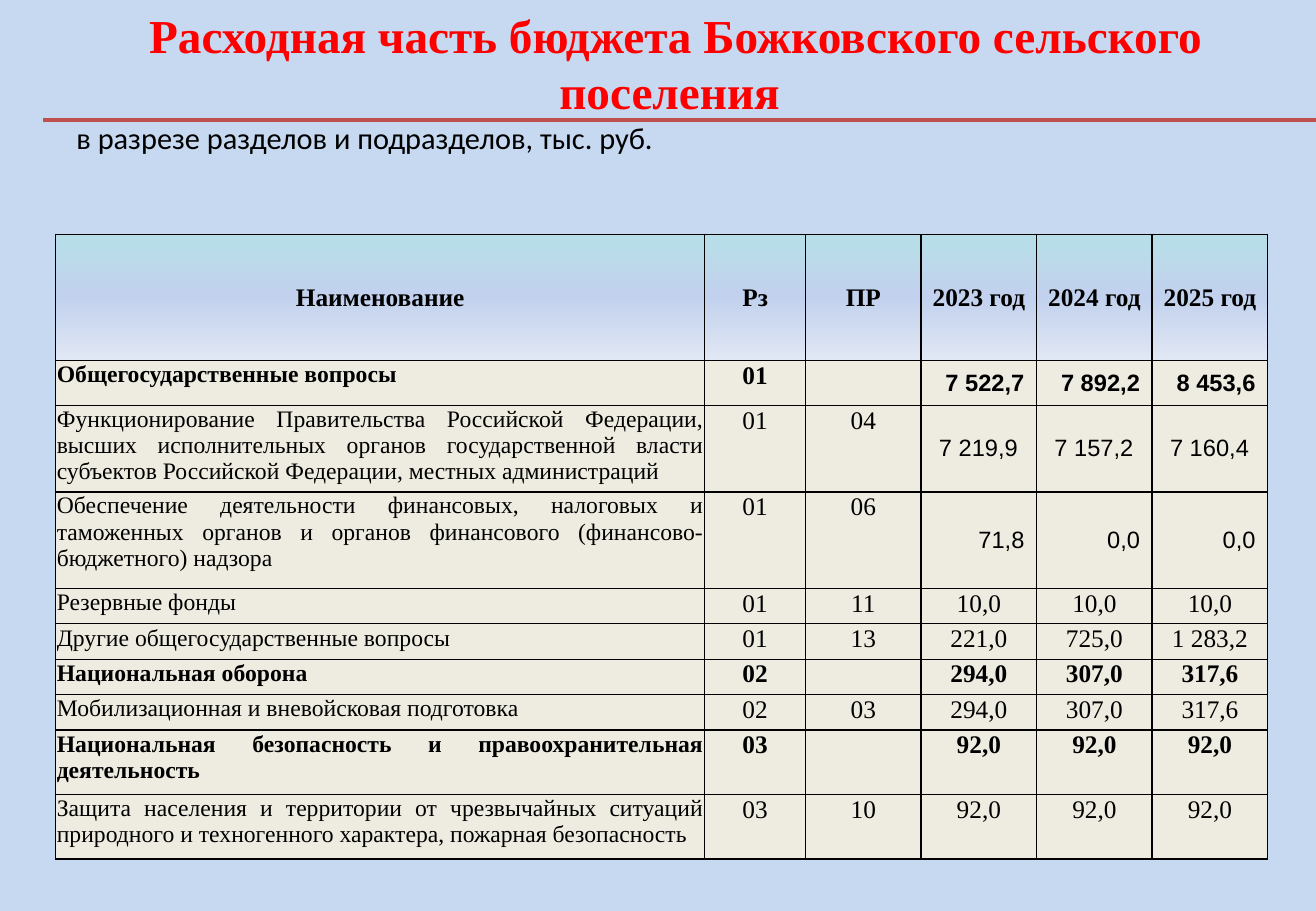
from lxml import etree
from pptx import Presentation
from pptx.dml.color import RGBColor
from pptx.enum.shapes import MSO_CONNECTOR
from pptx.enum.text import MSO_ANCHOR, PP_ALIGN
from pptx.oxml.ns import qn
from pptx.util import Pt

LEFT, CENTER, RIGHT, JUSTIFY = PP_ALIGN.LEFT, PP_ALIGN.CENTER, PP_ALIGN.RIGHT, PP_ALIGN.JUSTIFY
TOP, MIDDLE = MSO_ANCHOR.TOP, MSO_ANCHOR.MIDDLE
STRAIGHT = MSO_CONNECTOR.STRAIGHT
SERIF, SANS = "Times New Roman", "Arial"

# Content
COLORS = {"page": "C6D9F1", "title": "FF0000", "rule": "C0504D",
          "text": "000000", "border": "000000", "body": "EEECE1"}
HEADER_GRADIENT = [(0, "B7DEE8"), (50, "C2D1ED"), (100, "E1E8F5")]
TITLE = ("Расходная часть бюджета Божковского сельского поселения \n"
         "в разрезе разделов и подразделов, тыс. руб.")
HEADER = ["Наименование", "Рз", "ПР", "2023 год", "2024 год", "2025 год"]
BUDGET = [
    ["Общегосударственные вопросы", "01", "", "7 522,7", "7 892,2", "8 453,6"],
    ["Функционирование Правительства Российской Федерации, высших исполнительных "
     "органов государственной власти субъектов Российской Федерации, местных администраций",
     "01", "04", "7 219,9 ", "7 157,2 ", "7 160,4 "],
    ["Обеспечение деятельности финансовых, налоговых и таможенных органов и органов "
     "финансового (финансово-бюджетного) надзора", "01", "06", "71,8", "0,0", "0,0"],
    ["Резервные фонды", "01", "11", "10,0", "10,0", "10,0"],
    ["Другие общегосударственные вопросы", "01", "13", "221,0", "725,0", "1 283,2"],
    ["Национальная оборона", "02", "", "294,0", "307,0", "317,6"],
    ["Мобилизационная и вневойсковая подготовка", "02", "03", "294,0", "307,0", "317,6"],
    ["Национальная безопасность и правоохранительная деятельность",
     "03", "", "92,0", "92,0", "92,0"],
    ["Защита населения и территории от чрезвычайных ситуаций природного и техногенного "
     "характера, пожарная безопасность", "03", "10", "92,0", "92,0", "92,0"],
]
SANS_ROWS = 3  # the first body rows show their amounts in the sans font
COLUMN_WIDTHS = [384.7, 59.8] + [68.5] * 4
ROW_HEIGHTS = [74.7, 26.7, 51, 57.3] + [21] * 4 + [38.3] * 2
COLUMN_EDGES = [0.5, 1, 0.5, 1, 0.5, 1, 0.5]
ROW_EDGES = [0.5, 1, 0.5, 1, 1, 0.5, 0.5, 1, 1, 1, 1]


def style_text(para, font, size, color, bold, align):
    para.alignment = align
    for span in para.runs:
        span.font.name, span.font.size, span.font.bold = font, Pt(size), bold
        span.font.color.rgb = RGBColor.from_string(color)
    if not para.runs:
        etree.SubElement(para._p, qn("a:endParaRPr"), sz=str(size * 100))


def add_color(parent, color):
    etree.SubElement(parent, qn("a:srgbClr"), val=color)


def set_borders(cell, row, column):
    widths = {"a:lnL": COLUMN_EDGES[column], "a:lnR": COLUMN_EDGES[column + 1],
              "a:lnT": ROW_EDGES[row], "a:lnB": ROW_EDGES[row + 1]}
    for tag, width in widths.items():
        line = etree.SubElement(cell._tc.get_or_add_tcPr(), qn(tag), w=str(Pt(width)))
        add_color(etree.SubElement(line, qn("a:solidFill")), COLORS["border"])


def fill_header(cell):
    gradient = etree.SubElement(cell._tc.get_or_add_tcPr(), qn("a:gradFill"))
    stops = etree.SubElement(gradient, qn("a:gsLst"))
    for position, color in HEADER_GRADIENT:
        add_color(etree.SubElement(stops, qn("a:gs"), pos=str(position * 1000)), color)
    etree.SubElement(gradient, qn("a:lin"), ang="5400000", scaled="0")


def set_margins(cell, left, top, right, bottom):
    cell.margin_left, cell.margin_top = Pt(left), Pt(top)
    cell.margin_right, cell.margin_bottom = Pt(right), Pt(bottom)


def fill_cell(cell, row, column, text):
    cell.text_frame.text = text
    set_borders(cell, row, column)
    font, size, bold, align, anchor = SERIF, 15, True, CENTER, MIDDLE
    if row == 0:
        margins = (6.5, 5.8, 6.5, 5.8)
        fill_header(cell)
    else:
        bold = not BUDGET[row - 1][2]  # section totals have no subsection code
        anchor, margins = TOP, (0.7, 0.7, 0.7, 0)
        if column == 0:
            size, align = 14, JUSTIFY
        elif column > 2 and row <= SANS_ROWS:
            font, size, align, anchor = SANS, 14, RIGHT, MIDDLE
            margins = (7.2, 3.6, 7.2, 3.6)
        cell.fill.solid()
        cell.fill.fore_color.rgb = RGBColor.from_string(COLORS["body"])
    cell.vertical_anchor = anchor
    set_margins(cell, *margins)
    style_text(cell.text_frame.paragraphs[0], font, size, COLORS["text"], bold, align)


# Page
deck = Presentation()
deck.slide_width, deck.slide_height = Pt(780), Pt(540)
page = deck.slides.add_slide(deck.slide_layouts[6])
page.background.fill.solid()
page.background.fill.fore_color.rgb = RGBColor.from_string(COLORS["page"])

# Rule behind the title
rule = page.shapes.add_connector(STRAIGHT, Pt(25.2), Pt(71.2), Pt(780), Pt(71.2))
rule.line.color.rgb = RGBColor.from_string(COLORS["rule"])
rule.line.width = Pt(2.5)
etree.SubElement(rule._element.spPr, qn("a:effectLst"))

# Title
box = page.shapes.add_textbox(Pt(38.2), Pt(0), Pt(724.3), Pt(108.7))
box.text_frame.word_wrap = True
box.text_frame.text = TITLE
style_text(box.text_frame.paragraphs[0], SERIF, 28, COLORS["title"], True, CENTER)

# Budget table
rows = [HEADER] + BUDGET
frame = page.shapes.add_table(len(rows), len(HEADER), Pt(33), Pt(139),
                              Pt(sum(COLUMN_WIDTHS)), Pt(sum(ROW_HEIGHTS)))
table = frame.table
for column, width in enumerate(COLUMN_WIDTHS):
    table.columns[column].width = Pt(width)
for row, (height, texts) in enumerate(zip(ROW_HEIGHTS, rows)):
    table.rows[row].height = Pt(height)
    for column, text in enumerate(texts):
        fill_cell(table.cell(row, column), row, column, text)

deck.save("out.pptx")
